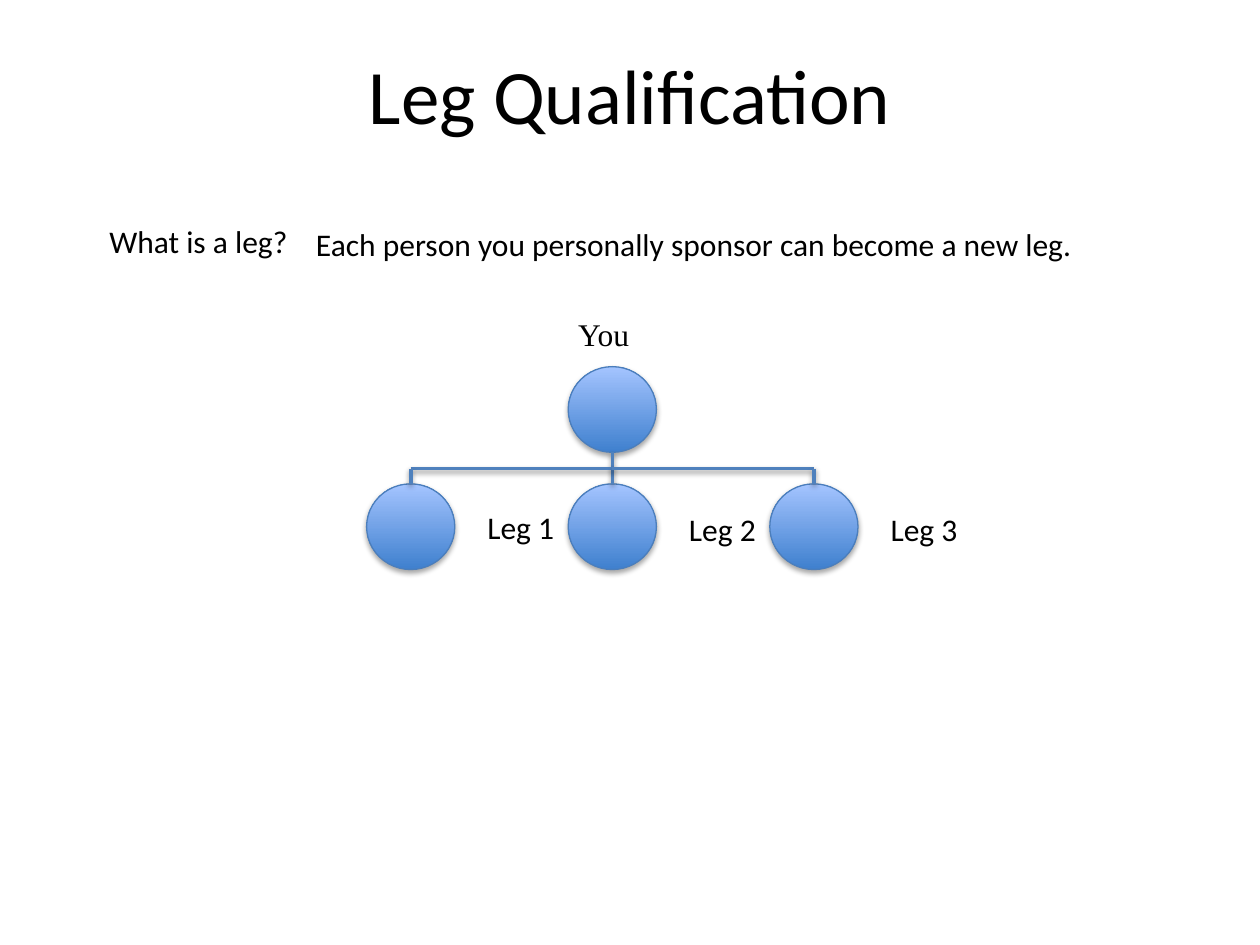
from lxml import etree
from pptx import Presentation
from pptx.dml.color import RGBColor
from pptx.enum.shapes import MSO_CONNECTOR as LINE, MSO_SHAPE as SHAPE
from pptx.enum.text import MSO_ANCHOR as ANCHOR, MSO_AUTO_SIZE as FIT, PP_ALIGN as ALIGN
from pptx.oxml import parse_xml
from pptx.oxml.ns import nsdecls, qn
from pptx.util import Inches, Pt

NODE_W, NODE_H = 0.7, 0.68
STEP = 1.6


def color(code):
    return RGBColor.from_string(code)


def add_run(para, text, size, font="Calibri"):
    run = para.add_run()
    run.text = text
    run.font.size = Pt(size)
    run.font.name = font
    run.font.color.rgb = color("000000")


def add_shadow(shape, dist, alpha):
    props = shape._element.spPr
    for old in props.findall(qn("a:effectLst")):
        props.remove(old)
    props.append(parse_xml(
        f'<a:effectLst {nsdecls("a")}>'
        f'<a:outerShdw blurRad="{Pt(3.1)}" dist="{Pt(dist)}" dir="5400000" rotWithShape="0">'
        f'<a:srgbClr val="000000"><a:alpha val="{alpha * 1000}"/></a:srgbClr>'
        '</a:outerShdw></a:effectLst>'))


def add_label(slide, text, x, y, w, font="Calibri"):
    box = slide.shapes.add_textbox(Inches(x), Inches(y), Inches(w), Inches(0.4))
    frame = box.text_frame
    frame.word_wrap = True
    frame.auto_size = FIT.SHAPE_TO_FIT_TEXT
    add_run(frame.paragraphs[0], text, 18, font)


def add_node(slide, x, y):
    node = slide.shapes.add_shape(SHAPE.FLOWCHART_CONNECTOR, Inches(x), Inches(y),
                                  Inches(NODE_W), Inches(NODE_H))
    node.fill.gradient()
    node.fill.gradient_angle = 90
    for stop, code in zip(node.fill.gradient_stops, ("3F80CE", "A4C4FF")):
        stop.color.rgb = color(code)
    node.line.color.rgb = color("4B7EBC")
    node.line.width = Pt(0.75)
    add_shadow(node, 1.8, 35)


def add_line(slide, x1, y1, x2, y2):
    line = slide.shapes.add_connector(LINE.STRAIGHT, Inches(x1), Inches(y1),
                                      Inches(x2), Inches(y2))
    line.line.color.rgb = color("4F81BD")
    line.line.width = Pt(2)
    add_shadow(line, 1.6, 38)


def add_title(slide, x, y, w, h):
    title = slide.shapes.title
    title.left, title.top, title.width, title.height = map(Inches, (x, y, w, h))
    frame = title.text_frame
    frame.vertical_anchor = ANCHOR.MIDDLE
    para = frame.paragraphs[0]
    para.alignment = ALIGN.CENTER
    add_run(para, "Leg Qualification", 44)


def add_intro(slide, x, y):
    add_label(slide, "What is a leg?", x, y, 1.64)
    add_label(slide, "Each person you personally sponsor can become a new leg.",
              x + 1.64, y + 0.03, 6.3)


def add_tree(slide, x, y):
    # Root above the middle leg
    root_x, leg_y, bar_y = x + STEP, y + 0.93, y + 0.81
    mid = root_x + NODE_W / 2
    add_node(slide, root_x, y)
    add_label(slide, "You", root_x - 0.02, y - 0.46, 0.64, "Times New Roman")

    # Legs with their labels
    for i, drop in enumerate((0.14, 0.16, 0.16)):
        leg_x = x + i * STEP
        add_node(slide, leg_x, leg_y)
        add_label(slide, f"Leg {i + 1}", leg_x + 0.86, leg_y + drop, 0.74)

    # Trunk, then a bar and a drop on each side
    add_line(slide, mid, y + NODE_H, mid, leg_y)
    for end in (mid - STEP, mid + STEP):
        add_line(slide, min(mid, end), bar_y, max(mid, end), bar_y)
        add_line(slide, end, bar_y, end, leg_y)


def main():
    deck = Presentation()
    deck.slide_width, deck.slide_height = Inches(10), Inches(7.5)
    slide = deck.slides.add_slide(deck.slide_layouts[5])
    slide.background.fill.solid()
    slide.background.fill.fore_color.rgb = color("FFFFFF")
    add_title(slide, 0.5, 0.3, 9, 0.89)
    add_intro(slide, 0.77, 1.71)
    add_tree(slide, 2.91, 2.91)
    deck.save("out.pptx")


if __name__ == "__main__":
    main()
